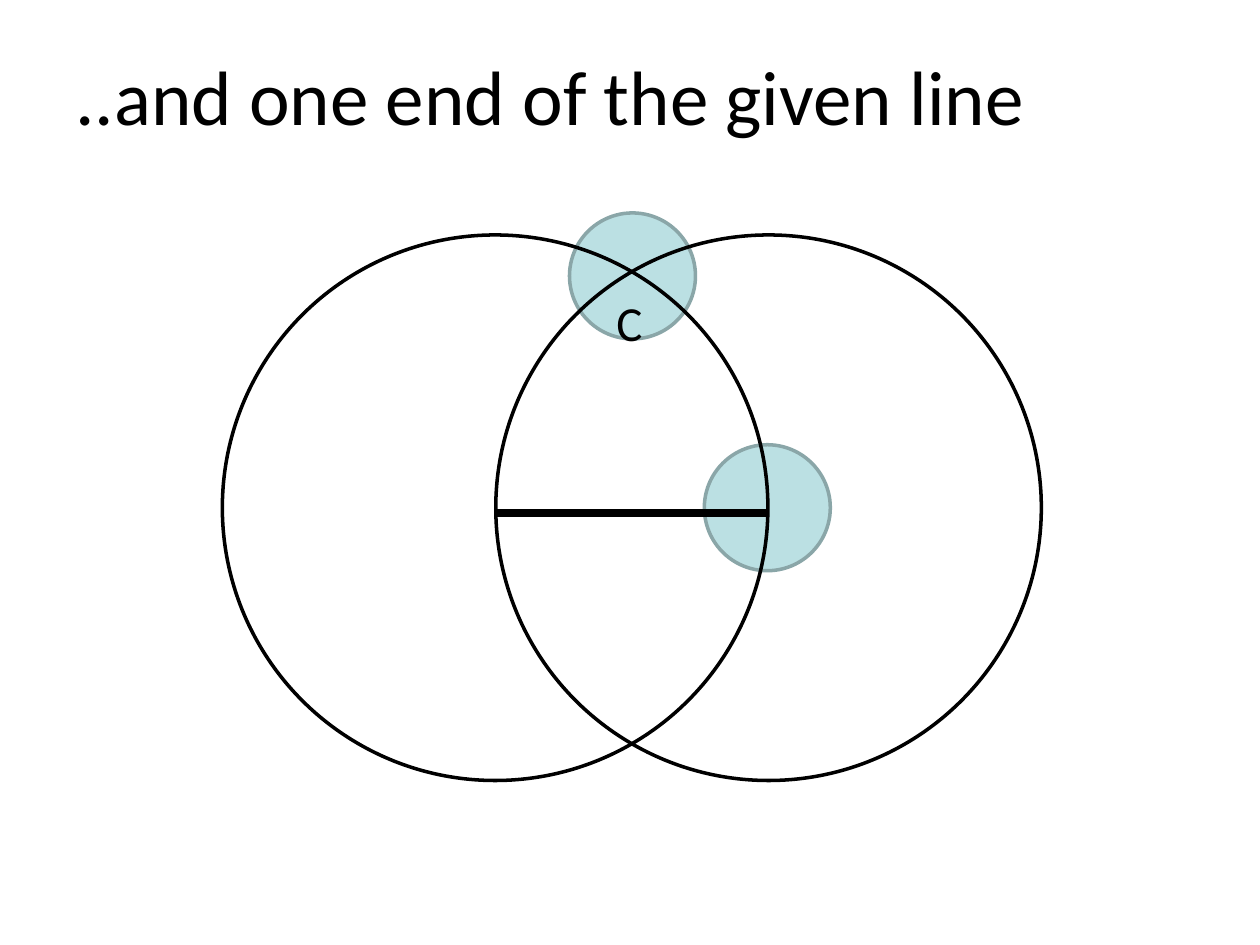
from dataclasses import dataclass

from lxml.etree import SubElement
from pptx import Presentation
from pptx.dml.color import RGBColor
from pptx.enum.shapes import MSO_CONNECTOR, MSO_SHAPE
from pptx.enum.text import MSO_ANCHOR, PP_ALIGN
from pptx.oxml.ns import qn
from pptx.util import Inches, Pt


@dataclass(frozen=True)
class Theme:
    font: str = "Calibri"
    ink: RGBColor = RGBColor(0x00, 0x00, 0x00)
    highlight: RGBColor = RGBColor(0xBB, 0xE0, 0xE3)
    highlight_edge: RGBColor = RGBColor(0x8A, 0xA6, 0xA8)
    title_size: int = 44
    label_size: int = 28
    outline: float = 2
    given_line: float = 4.5


theme = Theme()

# Text, (left, top, width, height), size, alignment, anchor
TEXTS = [
    ("..and one end of the given line", (0.5, 0.13, 9, 1.25),
     theme.title_size, PP_ALIGN.LEFT, MSO_ANCHOR.MIDDLE),
    ("C", (4.76, 2.27, 0.47, 0.57),
     theme.label_size, PP_ALIGN.CENTER, MSO_ANCHOR.TOP),
]
HIGHLIGHT_CENTERS = [(6.09, 4.03), (5.02, 2.19)]
HIGHLIGHT_DIAMETER = 1
CIRCLE_CENTERS = [(6.1, 4.03), (3.93, 4.03)]
CIRCLE_DIAMETER = 4.33
GIVEN_LINE = (3.94, 4.07, 6.1, 4.07)


def add_circle(page, center, diameter, edge, fill=None):
    left, top = (Inches(middle - diameter / 2) for middle in center)
    circle = page.shapes.add_shape(
        MSO_SHAPE.OVAL, left, top, Inches(diameter), Inches(diameter))
    circle.shadow.inherit = False
    if fill is None:
        circle.fill.background()
    else:
        circle.fill.solid()
        circle.fill.fore_color.rgb = fill
    circle.line.color.rgb = edge
    circle.line.width = Pt(theme.outline)


def add_given_line(page):
    line = page.shapes.add_connector(
        MSO_CONNECTOR.STRAIGHT, *map(Inches, GIVEN_LINE))
    line.line.color.rgb = theme.ink
    line.line.width = Pt(theme.given_line)
    SubElement(line._element.spPr, qn("a:effectLst"))


def add_text(page, text, area, size, alignment, anchor):
    box = page.shapes.add_textbox(*map(Inches, area))
    frame = box.text_frame
    frame.word_wrap = True
    frame.vertical_anchor = anchor
    para = frame.paragraphs[0]
    para.text = text
    para.alignment = alignment
    para.font.name = theme.font
    para.font.size = Pt(size)
    para.font.color.rgb = theme.ink


def main():
    deck = Presentation()
    deck.slide_width, deck.slide_height = Inches(10), Inches(7.5)
    page = deck.slides.add_slide(deck.slide_layouts[6])
    for center in HIGHLIGHT_CENTERS:
        add_circle(page, center, HIGHLIGHT_DIAMETER,
                   theme.highlight_edge, theme.highlight)
    add_given_line(page)
    for center in CIRCLE_CENTERS:
        add_circle(page, center, CIRCLE_DIAMETER, theme.ink)
    for entry in TEXTS:
        add_text(page, *entry)
    deck.save("out.pptx")


if __name__ == "__main__":
    main()
